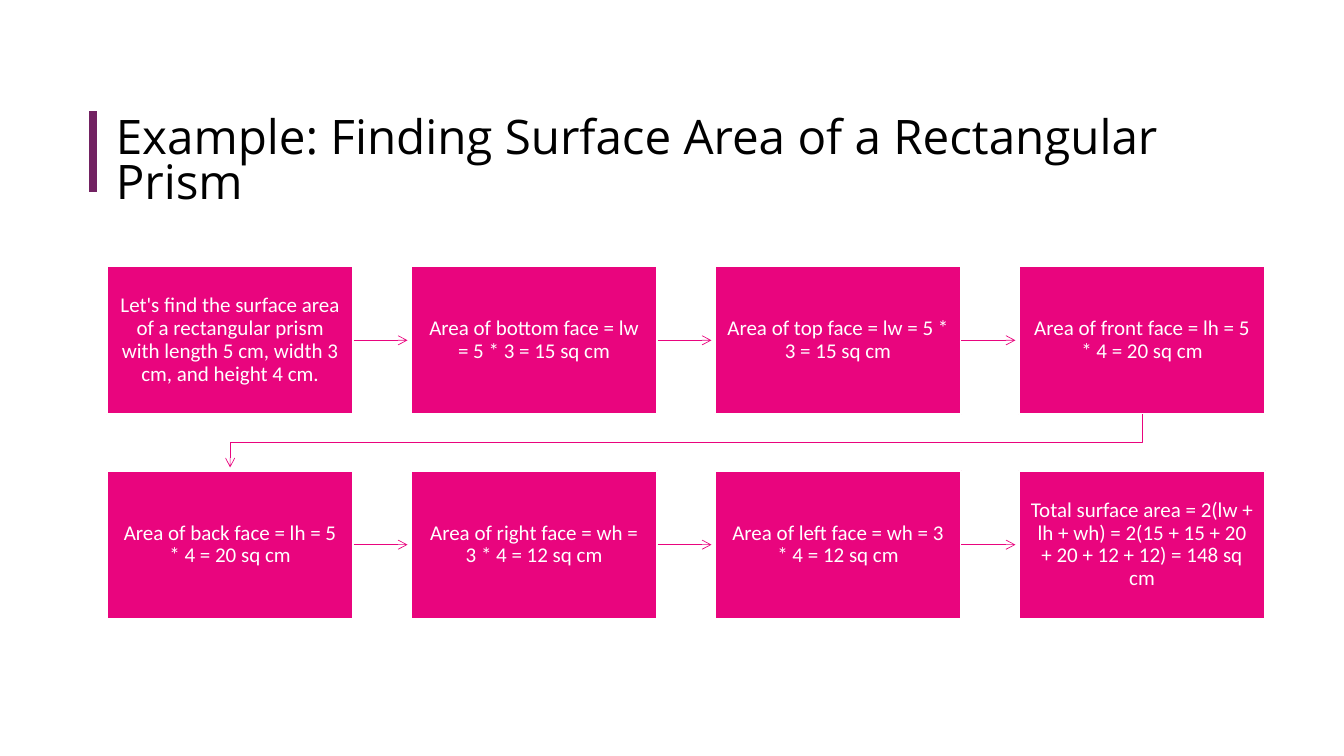
from dataclasses import dataclass

from lxml import etree
from pptx import Presentation
from pptx.dml.color import RGBColor
from pptx.enum.shapes import MSO_CONNECTOR, MSO_SHAPE
from pptx.enum.text import MSO_ANCHOR, PP_ALIGN
from pptx.oxml.ns import qn
from pptx.util import Cm, Pt

STRAIGHT = MSO_CONNECTOR.STRAIGHT
RECTANGLE = MSO_SHAPE.RECTANGLE
TOP, MIDDLE = MSO_ANCHOR.TOP, MSO_ANCHOR.MIDDLE
LEFT, CENTER = PP_ALIGN.LEFT, PP_ALIGN.CENTER
RIGHT_SIDE = 3


@dataclass(frozen=True)
class Theme:
    pink: RGBColor = RGBColor(0xE9, 0x05, 0x7E)
    purple: RGBColor = RGBColor(0x72, 0x22, 0x62)
    white: RGBColor = RGBColor(0xFF, 0xFF, 0xFF)
    black: RGBColor = RGBColor(0, 0, 0)
    title_font: str = "Open Sans"
    body_font: str = "Calibri"
    title_size: Pt = Pt(34)
    body_size: Pt = Pt(15)
    arrow_width: Pt = Pt(0.5)
    border_width: Pt = Pt(1.5)
    bar_width: Pt = Pt(6)


THEME = Theme()

TITLE = "Example: Finding Surface Area of a Rectangular Prism"
STEPS = [
    "Let's find the surface area of a rectangular prism with length 5 cm, width 3 cm, and height 4 cm.",
    "Area of bottom face = lw = 5 * 3 = 15 sq cm",
    "Area of top face = lw = 5 * 3 = 15 sq cm",
    "Area of front face = lh = 5 * 4 = 20 sq cm",
    "Area of back face = lh = 5 * 4 = 20 sq cm",
    "Area of right face = wh = 3 * 4 = 12 sq cm",
    "Area of left face = wh = 3 * 4 = 12 sq cm",
    "Total surface area = 2(lw + lh + wh) = 2(15 + 15 + 20 + 20 + 12 + 12) = 148 sq cm",
]

COLUMNS = 4
GRID_LEFT, GRID_TOP = Cm(2.69), Cm(6.71)
BOX_W, BOX_H = Cm(6.22), Cm(3.73)
COLUMN_PITCH, ROW_PITCH = Cm(7.66), Cm(5.15)
ARROW_GAP = Cm(0.08)


def write(tf, text, font, size, color, align, anchor, spacing, inset_x, inset_y):
    tf.word_wrap = True
    tf.vertical_anchor = anchor
    tf.margin_left = tf.margin_right = inset_x
    tf.margin_top = tf.margin_bottom = inset_y
    p = tf.paragraphs[0]
    p.text = text
    p.alignment = align
    p.line_spacing = spacing
    p.font.name = font
    p.font.size = size
    p.font.color.rgb = color


def add_title(s):
    tb = s.shapes.add_textbox(Cm(2.67), Cm(2.79), Cm(29.21), Cm(2.03))
    write(tb.text_frame, TITLE, THEME.title_font, THEME.title_size, THEME.black,
          LEFT, TOP, 0.79, Cm(0.25), Cm(0.2))


def style_line(shape, color, width):
    shape.line.color.rgb = color
    shape.line.width = width


def add_line(s, x1, y1, x2, y2, color, width):
    line = s.shapes.add_connector(STRAIGHT, x1, y1, x2, y2)
    style_line(line, color, width)
    etree.SubElement(line._element.spPr, qn("a:effectLst"))
    return line


def add_arrowhead(shape):
    etree.SubElement(shape.line._get_or_add_ln(), qn("a:tailEnd"), type="arrow")


def add_step(s, index, text):
    row, column = divmod(index, COLUMNS)
    sp = s.shapes.add_shape(RECTANGLE, GRID_LEFT + column * COLUMN_PITCH,
                            GRID_TOP + row * ROW_PITCH, BOX_W, BOX_H)
    sp.shadow.inherit = False
    sp.fill.solid()
    sp.fill.fore_color.rgb = THEME.pink
    style_line(sp, THEME.white, THEME.border_width)
    write(sp.text_frame, text, THEME.body_font, THEME.body_size, THEME.white,
          CENTER, MIDDLE, 0.9, Cm(0.3), Cm(0.33))
    return sp


def add_arrow(s, box, following):
    y = box.top + box.height // 2
    line = add_line(s, box.left + box.width, y, following.left - ARROW_GAP, y,
                    THEME.pink, THEME.arrow_width)
    line.begin_connect(box, RIGHT_SIDE)
    add_arrowhead(line)


def add_row_turn(s, box, following):
    x1 = box.left + box.width // 2
    x2 = following.left + following.width // 2
    y1 = box.top + box.height
    middle = (y1 + following.top) // 2
    fb = s.shapes.build_freeform(x1, y1)
    fb.add_line_segments([(x1, middle), (x2, middle), (x2, following.top - ARROW_GAP)],
                         close=False)
    sp = fb.convert_to_shape()
    sp.shadow.inherit = False
    sp.fill.background()
    style_line(sp, THEME.pink, THEME.arrow_width)
    add_arrowhead(sp)


def main():
    prs = Presentation()
    prs.slide_width, prs.slide_height = Cm(33.87), Cm(19.05)
    s = prs.slides.add_slide(prs.slide_layouts[6])
    add_line(s, Cm(2.34), Cm(2.8), Cm(2.34), Cm(4.83), THEME.purple, THEME.bar_width)
    add_title(s)
    boxes = [add_step(s, i, text) for i, text in enumerate(STEPS)]
    for box, following in zip(boxes, boxes[1:]):
        connect = add_arrow if box.top == following.top else add_row_turn
        connect(s, box, following)
    prs.save("out.pptx")


if __name__ == "__main__":
    main()
